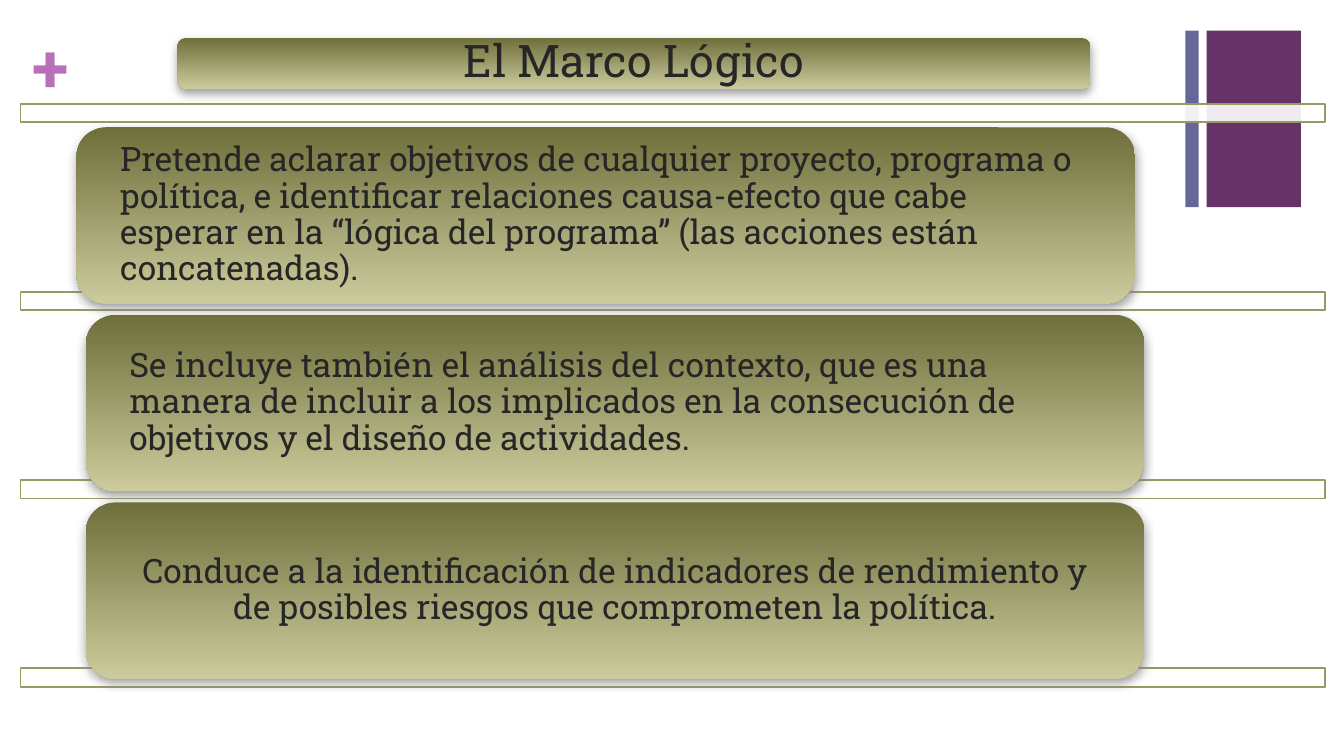
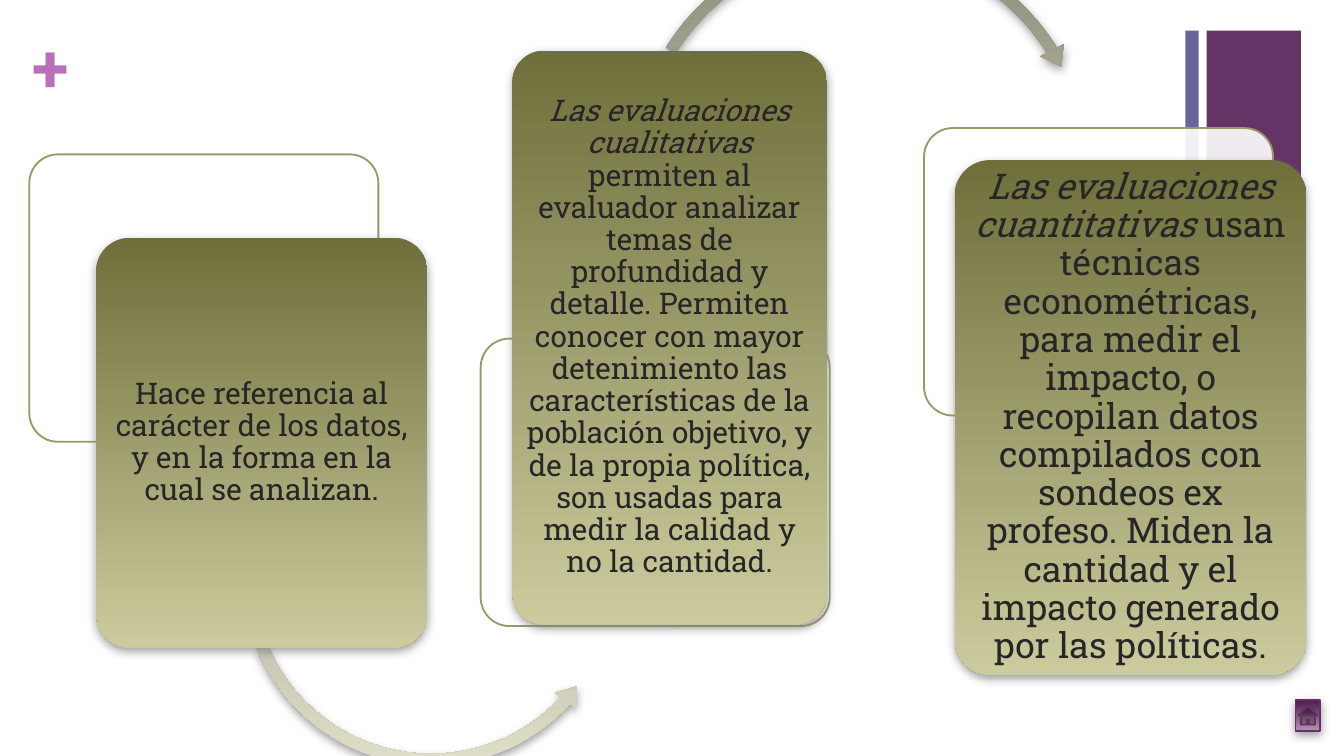
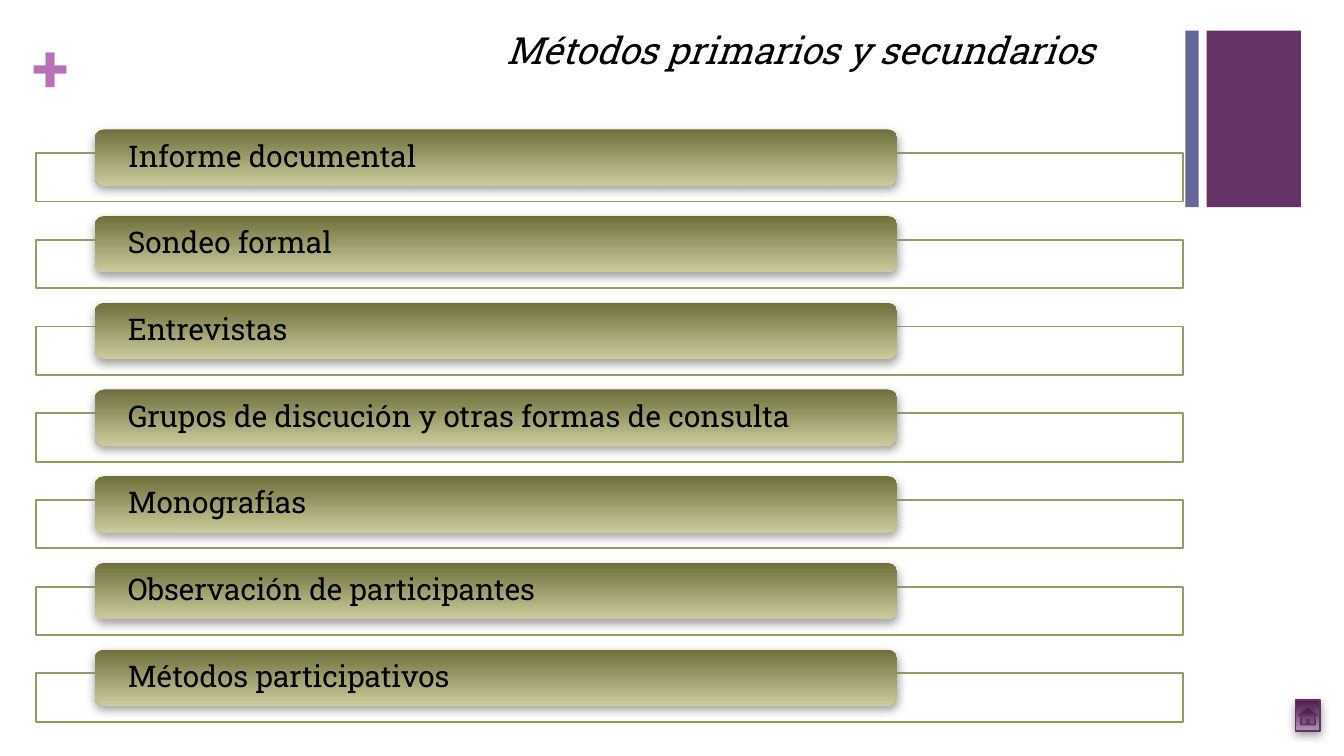
from lxml import etree
from pptx import Presentation
from pptx.dml.color import RGBColor
from pptx.enum.shapes import MSO_SHAPE
from pptx.enum.text import MSO_ANCHOR, PP_ALIGN
from pptx.oxml.ns import qn
from pptx.util import Pt

RECT = MSO_SHAPE.RECTANGLE
ROUND = MSO_SHAPE.ROUNDED_RECTANGLE
LEFT_ARC = MSO_SHAPE.LEFT_CIRCULAR_ARROW
RIGHT_ARC = MSO_SHAPE.CIRCULAR_ARROW
HOME = MSO_SHAPE.ACTION_BUTTON_HOME
LEFT, CENTER = PP_ALIGN.LEFT, PP_ALIGN.CENTER
TOP, MIDDLE = MSO_ANCHOR.TOP, MSO_ANCHOR.MIDDLE


class Theme:
    font = "Roboto Slab"
    purple, slate, plus = "663366", "666699", "B870B8"
    ink, black, white = "262626", "000000", "FFFFFF"
    olive, shadow, button_line = "999966", "808080", "653165"
    card_fill = ("6F6F3C", "CBCB9D")
    arrow_fill = ("8B8B79", "E1E1CB")
    button_fill = ("4D1A4D", "AF94AF")
    plus_size, title, subtitle, large, body, small = 36, 24, 20, 19, 18, 16


def add_box(slide, kind, at, fill, line=None, opacity=100):
    """A pair of colours gives a vertical gradient with a soft shadow."""
    s = slide.shapes.add_shape(kind, *map(Pt, at))
    s.shadow.inherit = False
    spPr = s._element.spPr
    if isinstance(fill, tuple):
        s.fill.gradient()
        s.fill.gradient_angle = 270
        for stop, color in zip(s.fill.gradient_stops, fill):
            stop.color.rgb = RGBColor.from_string(color)
        shadow = etree.SubElement(
            spPr.find(qn("a:effectLst")), qn("a:outerShdw"), blurRad=str(Pt(5)),
            dist=str(Pt(2)), dir="5400000", rotWithShape="0")
        color = etree.SubElement(shadow, qn("a:srgbClr"), val=Theme.shadow)
        etree.SubElement(color, qn("a:alpha"), val="75000")
    else:
        s.fill.solid()
        s.fill.fore_color.rgb = RGBColor.from_string(fill)
        if opacity < 100:
            color = spPr.find(qn("a:solidFill"))[0]
            etree.SubElement(color, qn("a:alpha"), val=str(opacity * 1000))
    if line:
        s.line.color.rgb = RGBColor.from_string(line)
        s.line.width = Pt(1)
    else:
        s.line.fill.background()
    return s


def write(s, text, size, color=Theme.ink, lead="", align=LEFT, anchor=MIDDLE,
          inset=(0, 0), spacing=0.9, after=0.35, bold=False, italic=False):
    """Write one paragraph, opened by an optional italic lead."""
    tf = s.text_frame
    tf.word_wrap = True
    tf.vertical_anchor = anchor
    tf.margin_left = tf.margin_right = Pt(inset[0])
    tf.margin_top = tf.margin_bottom = Pt(inset[1])
    p = tf.paragraphs[0]
    p.alignment = align
    p.line_spacing = spacing
    p.space_after = Pt(size * after)
    for part, slanted in ((lead, True), (text, italic)):
        if part:
            r = p.add_run()
            r.text = part
            r.font.name, r.font.size = Theme.font, Pt(size)
            r.font.bold, r.font.italic = bold, slanted
            r.font.color.rgb = RGBColor.from_string(color)


prs = Presentation()
prs.slide_width, prs.slide_height = Pt(720), Pt(405)

# Shared decoration
slides = [prs.slides.add_slide(prs.slide_layouts[6]) for _ in range(3)]
for slide in slides:
    add_box(slide, RECT, (646.5, 16.5, 50.5, 94.5), Theme.purple)
    s = slide.shapes.add_textbox(Pt(17.3), Pt(13.7), Pt(21), Pt(44))
    write(s, "+", Theme.plus_size, Theme.plus, anchor=TOP, spacing=1, after=0, bold=True)
    add_box(slide, RECT, (635, 16.5, 7.2, 94.5), Theme.slate)
logic, data, methods = slides

# Slide 1: title and three statements, each over a thin band
statements = [
    ("El Marco Lógico", (95, 20.3, 489, 27.4), Theme.title, CENTER),
    ("Pretende aclarar objetivos de cualquier proyecto, programa o política, e "
     "identificar relaciones causa-efecto que cabe esperar en la “lógica del "
     "programa” (las acciones están concatenadas).",
     (41, 68.2, 567, 94.5), Theme.body, LEFT),
    ("Se incluye también el análisis del contexto, que es una manera de incluir a "
     "los implicados en la consecución de objetivos y el diseño de actividades.",
     (46, 168.7, 567, 94.5), Theme.body, LEFT),
    ("Conduce a la identificación de indicadores de rendimiento y de posibles "
     "riesgos que comprometen la política.",
     (46, 269.2, 567, 94.5), Theme.body, CENTER),
]
for i, (text, at, size, align) in enumerate(statements):
    add_box(logic, RECT, (11, 55.5 + 100.8 * i, 699, 10), Theme.white, Theme.olive, 90)
    s = add_box(logic, ROUND, at, Theme.card_fill)
    write(s, text, size, align=align, inset=(18.7, 0))

# Slide 2: three cards joined by curved arrows
# Arrow: kind, place, thickness %, head angle, end angle, start angle, head width %
cards = [
    ((15.7, 82.7), (51.6, 127.4, 177.3, 219.6), Theme.small, "",
     "Hace referencia al carácter de los datos, y en la forma en la cual se analizan.",
     (LEFT_ARC, (126, 203.8, 210, 210), 2.9, 5.84, 42.75, 157.73, 3.3)),
    ((257.5, 181.4), (274.5, 27.1, 168.5, 307.5), Theme.small,
     "Las evaluaciones cualitativas ",
     "permiten al evaluador analizar temas de profundidad y detalle. Permiten "
     "conocer con mayor detenimiento las características de la población objetivo, "
     "y de la propia política, son usadas para medir la calidad y no la cantidad.",
     (RIGHT_ARC, (334, -36.7, 255, 255), 2.4, 4.77, 327.98, 211.94, 2.8)),
    ((495, 68.6), (511.5, 85.8, 188.4, 275.8), Theme.large,
     "Las evaluaciones cuantitativas ",
     "usan técnicas econométricas, para medir el impacto, o recopilan datos "
     "compilados con sondeos ex profeso. Miden la cantidad y el impacto generado "
     "por las políticas.", None),
]
for corner, at, size, lead, text, arrow in cards:
    s = add_box(data, ROUND, (*corner, 187, 154), Theme.white, Theme.olive, 90)
    s.adjustments[0] = 0.1
    if arrow:
        kind, place, thick, head, end, start, width = arrow
        s = add_box(data, kind, place, Theme.arrow_fill)
        # Angles are stored in 60000ths of a degree, scaled by 100000
        values = (thick / 100, head * 0.6, end * 0.6, start * 0.6, width / 100)
        for i, value in enumerate(values):
            s.adjustments[i] = value
    s = add_box(data, ROUND, at, Theme.card_fill)
    s.adjustments[0] = 0.1
    write(s, text, size, lead=lead, align=CENTER, inset=(2.4, 1.6))

# Slide 3: list of methods
names = ["Informe documental", "Sondeo formal", "Entrevistas",
         "Grupos de discución y otras formas de consulta", "Monografías",
         "Observación de participantes", "Métodos participativos"]
for i, name in enumerate(names):
    y = 46.45 * i
    add_box(methods, RECT, (19.3, 82 + y, 614.5, 26), Theme.white, Theme.olive, 90)
    s = add_box(methods, ROUND, (50.7, 69.3 + y, 430, 30.2), Theme.card_fill)
    write(s, name, Theme.small, Theme.black, inset=(16.3, 0))
s = methods.shapes.add_textbox(Pt(225.4), Pt(10.8), Pt(406.8), Pt(31.5))
write(s, "Métodos primarios y secundarios", Theme.subtitle, Theme.black, align=CENTER,
      anchor=TOP, inset=(7.2, 3.6), spacing=1, after=0, italic=True)

# Home buttons
for slide in (data, methods):
    add_box(slide, HOME, (694, 375, 13.3, 16.5), Theme.button_fill, Theme.button_line)

prs.save("out.pptx")
